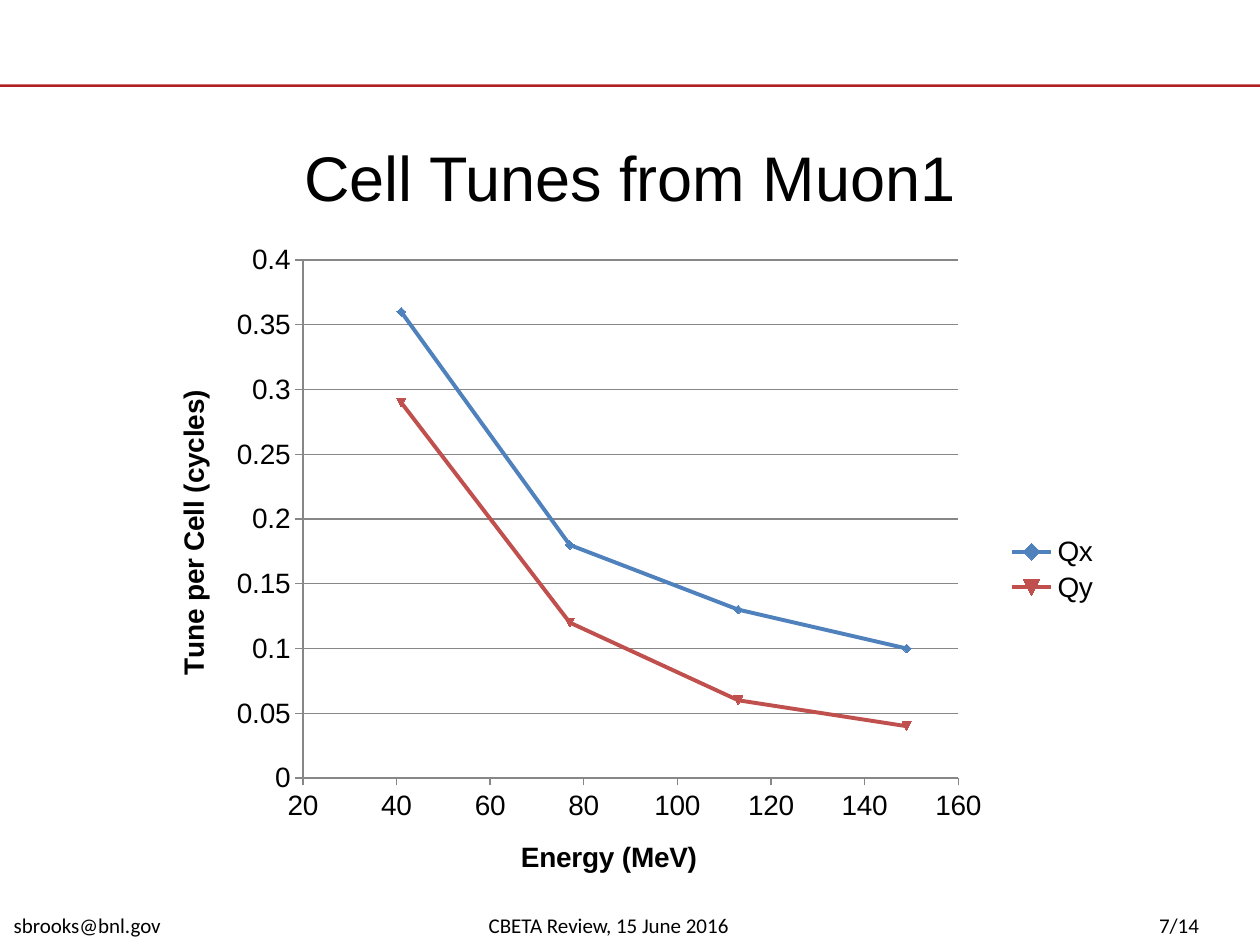
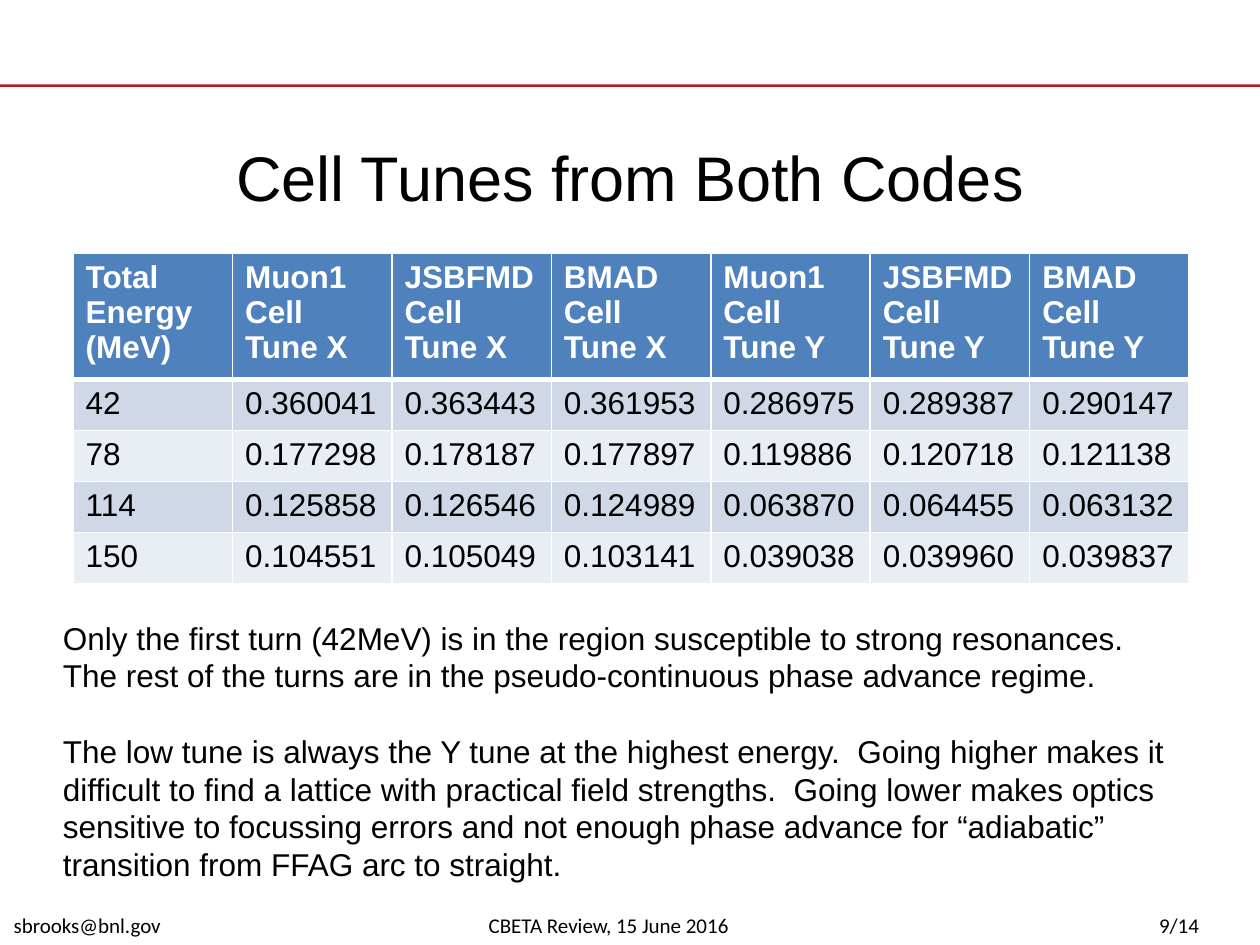
from lxml import etree
from pptx import Presentation
from pptx import util as u
from pptx.chart.data import XyChartData
from pptx.dml.color import RGBColor
from pptx.enum import chart as charts, shapes, text
from pptx.oxml import parse_xml
from pptx.oxml.ns import nsdecls, qn

BLACK, WHITE, RED, GRAY = "000000", "FFFFFF", "B21F22", "878787"
HEADER_FILL, ROW_FILLS = "4F81BD", ("D0D8E8", "E9EDF4")
WIDTH, HEIGHT = 10, 7.5
MARGIN = 0.5
PAGE_COUNT = 14

FOOTERS = [
    ("sbrooks@bnl.gov", (0.01, 7.19, 2.04, 0.3)),
    ("{page}/{count}", (9.1, 7.19, 1.52, 0.3)),
    ("CBETA Review, 15 June 2016", (3.78, 7.19, 2.58, 0.3)),
]

CHART_PAGE, CHART_TITLE = 7, "Cell Tunes from Muon1"
CHART_BOX = (1.18, 1.85, 7.65, 5.34)
PLOT_SHARES = {"x": 0.16, "y": 0.04, "w": 0.68, "h": 0.77}
ENERGIES = [149, 113, 77, 41]
TUNES = [
    ("Qx", "4F81BD", [0.1, 0.13, 0.18, 0.36]),
    ("Qy", "C0504D", [0.04, 0.06, 0.12, 0.29]),
]
AXES = {
    "category_axis": ("Energy (MeV)", 20, 160, 20),
    "value_axis": ("Tune per Cell (cycles)", 0, 0.4, 0.05),
}

TABLE_PAGE, TABLE_TITLE = 9, "Cell Tunes from Both Codes"
TABLE_BOX = (0.58, 2.01, 8.86, 2.62)
ROWS_HEIGHT = 2.03
CODES = ["Muon1", "JSBFMD", "BMAD"]
HEADINGS = ["Total Energy (MeV)"] + [
    f"{code} Cell Tune {plane}" for plane in "XY" for code in CODES
]
ROWS = [
    ["42", "0.360041", "0.363443", "0.361953", "0.286975", "0.289387", "0.290147"],
    ["78", "0.177298", "0.178187", "0.177897", "0.119886", "0.120718", "0.121138"],
    ["114", "0.125858", "0.126546", "0.124989", "0.063870", "0.064455", "0.063132"],
    ["150", "0.104551", "0.105049", "0.103141", "0.039038", "0.039960", "0.039837"],
]
REMARKS_BOX = (MARGIN, 4.91, 8.93, 2.38)
REMARKS = [
    "Only the first turn (42MeV) is in the region susceptible to strong resonances.  "
    "The rest of the turns are in the pseudo-continuous phase advance regime.",
    "The low tune is always the Y tune at the highest energy.  Going higher makes it "
    "difficult to find a lattice with practical field strengths.  Going lower makes optics "
    "sensitive to focussing errors and not enough phase advance for “adiabatic” "
    "transition from FFAG arc to straight.",
]


def color(value):
    return RGBColor.from_string(value)


def inches(box):
    return [u.Inches(length) for length in box]


def style(font, size, name="Arial", fill=BLACK, bold=False):
    font.size, font.name, font.bold = u.Pt(size), name, bold
    font.color.rgb = color(fill)


def add_text(slide, paragraphs, box, size, name="Arial", wrap=True, inset=0):
    frame = slide.shapes.add_textbox(*inches(box)).text_frame
    frame.word_wrap = wrap
    frame.margin_left = frame.margin_right = u.Inches(inset)
    frame.margin_top = frame.margin_bottom = u.Inches(inset / 2)
    frame.text = "\n".join(paragraphs)
    for paragraph in frame.paragraphs:
        style(paragraph.font, size, name)
    return frame


def add_page(presentation, page, title):
    slide = presentation.slides.add_slide(presentation.slide_layouts[6])
    for footer, box in FOOTERS:
        words = footer.format(page=page, count=PAGE_COUNT)
        add_text(slide, [words], box, 12, "Calibri", wrap=False, inset=0.1)
    band = slide.shapes.add_shape(
        shapes.MSO_SHAPE.RECTANGLE, *inches((0, 0.67, WIDTH, 0.02))
    )
    band.shadow.inherit = False
    band.fill.solid()
    band.fill.fore_color.rgb = color(RED)
    band.line.fill.background()
    frame = add_text(slide, [title], (MARGIN, 0.77, WIDTH - 2 * MARGIN, 1.25), 36)
    frame.vertical_anchor = text.MSO_ANCHOR.MIDDLE
    frame.paragraphs[0].alignment = text.PP_ALIGN.CENTER
    return slide


def place_plot(chart):
    plot_area = chart._chartSpace.chart.plotArea
    for layout in plot_area.findall(qn("c:layout")):
        plot_area.remove(layout)
    modes = '<c:layoutTarget val="inner"/><c:xMode val="edge"/><c:yMode val="edge"/>'
    sizes = "".join(f'<c:{key} val="{share}"/>' for key, share in PLOT_SHARES.items())
    plot_area.insert(0, parse_xml(
        f'<c:layout {nsdecls("c")}><c:manualLayout>{modes}{sizes}</c:manualLayout></c:layout>'
    ))


def draw_hairline(line):
    line.width = u.Pt(0)
    line.color.rgb = color(GRAY)


def add_tune_chart(slide):
    data = XyChartData()
    for name, _, tunes in TUNES:
        series = data.add_series(name)
        for energy, tune in zip(ENERGIES, tunes):
            series.add_data_point(energy, tune)
    chart = slide.shapes.add_chart(
        charts.XL_CHART_TYPE.XY_SCATTER_LINES, *inches(CHART_BOX), data
    ).chart
    style(chart.font, 16)
    chart.has_title = False
    chart.has_legend = True
    chart.legend.position = charts.XL_LEGEND_POSITION.RIGHT
    chart.legend.include_in_layout = False
    chart.plots[0].vary_by_categories = False
    for series, (_, stroke, _) in zip(chart.plots[0].series, TUNES):
        series.smooth = False
        series.format.line.width = u.Pt(2.25)
        series.format.line.color.rgb = color(stroke)
    for kind, (title, low, high, step) in AXES.items():
        axis = getattr(chart, kind)
        axis.minimum_scale, axis.maximum_scale, axis.major_unit = low, high, step
        axis.major_tick_mark = charts.XL_TICK_MARK.OUTSIDE
        axis.minor_tick_mark = charts.XL_TICK_MARK.NONE
        axis.has_major_gridlines = kind == "value_axis"
        draw_hairline(axis.format.line)
        axis.tick_labels.number_format = "General"
        axis.tick_labels.number_format_is_linked = False
        axis.axis_title.text_frame.text = title
        style(axis.axis_title.text_frame.paragraphs[0].font, 16, bold=True)
    draw_hairline(chart.value_axis.major_gridlines.format.line)
    place_plot(chart)


def set_borders(cell, top, bottom):
    properties = cell._tc.get_or_add_tcPr()
    for side, points in (("L", 1), ("R", 1), ("T", top), ("B", bottom)):
        line = etree.SubElement(properties, qn(f"a:ln{side}"), w=str(u.Pt(points)))
        fill = etree.SubElement(line, qn("a:solidFill"))
        etree.SubElement(fill, qn("a:srgbClr"), val=WHITE)


def add_tune_table(slide):
    left, top, width, height = TABLE_BOX
    frame = slide.shapes.add_table(len(ROWS) + 1, len(HEADINGS), *inches(TABLE_BOX))
    table = frame.table
    for column in table.columns:
        column.width = u.Inches(width / len(HEADINGS))
    for index, values in enumerate([HEADINGS] + ROWS):
        heading = index == 0
        table.rows[index].height = u.Inches(ROWS_HEIGHT / (len(ROWS) + 1))
        for cell, value in zip(table.rows[index].cells, values):
            set_borders(cell, 3 if index == 1 else 1, 3 if heading else 1)
            cell.fill.solid()
            cell.fill.fore_color.rgb = color(HEADER_FILL if heading else ROW_FILLS[(index - 1) % 2])
            cell.text = value
            style(cell.text_frame.paragraphs[0].font, 18,
                  fill=WHITE if heading else BLACK, bold=heading)
    frame.height = u.Inches(height)


def add_remarks(slide):
    frame = add_text(slide, REMARKS, REMARKS_BOX, 18)
    frame.paragraphs[1].space_before = u.Pt(21.5)


def main():
    presentation = Presentation()
    presentation.slide_width, presentation.slide_height = inches((WIDTH, HEIGHT))
    add_tune_chart(add_page(presentation, CHART_PAGE, CHART_TITLE))
    table_slide = add_page(presentation, TABLE_PAGE, TABLE_TITLE)
    add_tune_table(table_slide)
    add_remarks(table_slide)
    presentation.save("out.pptx")


if __name__ == "__main__":
    main()
